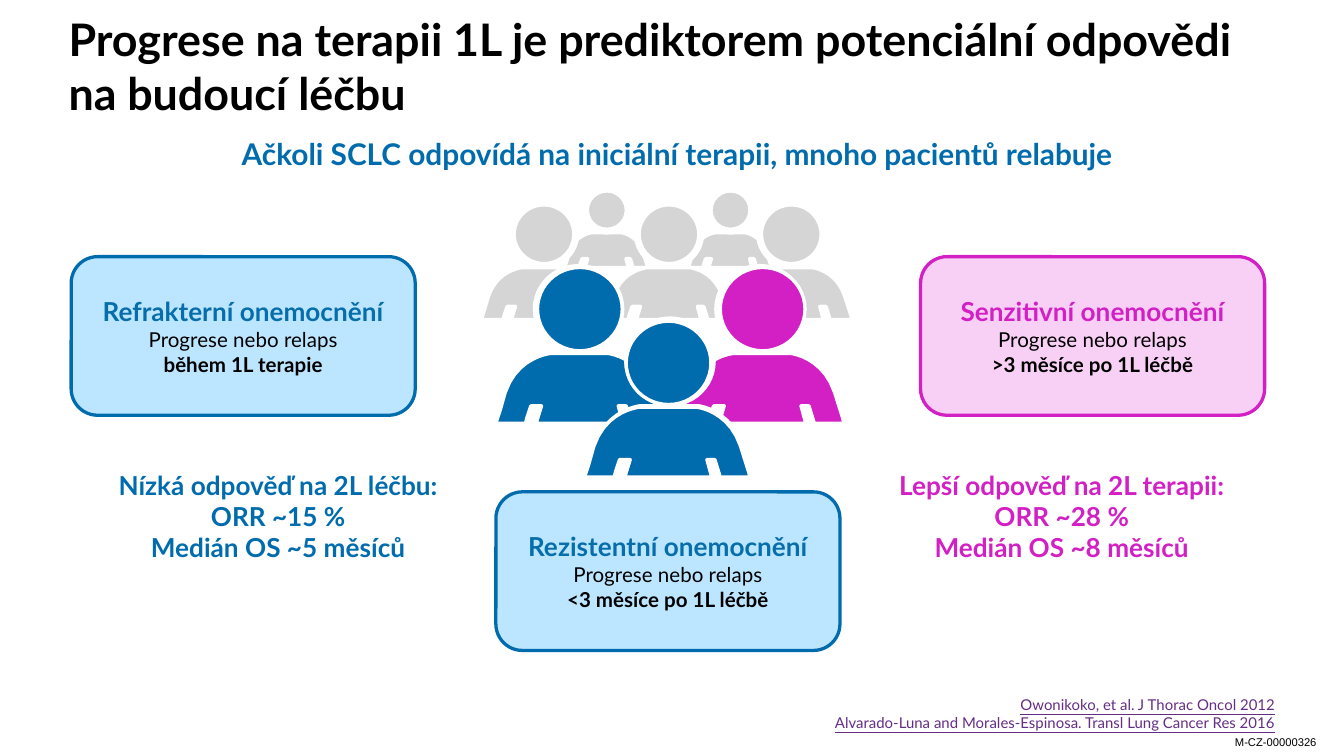
import dataclasses

import pptx
import pptx.dml.color
import pptx.enum.shapes
import pptx.enum.text
import pptx.util

RGBColor = pptx.dml.color.RGBColor
Align = pptx.enum.text.PP_ALIGN
Anchor = pptx.enum.text.MSO_ANCHOR
Kind = pptx.enum.shapes.MSO_SHAPE

PX = 9144  # EMU in one px, 100 px to the inch
BLACK = RGBColor(0x00, 0x00, 0x00)
WHITE = RGBColor(0xFF, 0xFF, 0xFF)
GREY = RGBColor(0xD5, 0xD5, 0xD5)
BLUE = RGBColor(0x00, 0x6C, 0xAD)
STEEL = RGBColor(0x07, 0x6E, 0xAC)
PALE = RGBColor(0xBC, 0xE6, 0xFF)
PINK = RGBColor(0xD2, 0x20, 0xC5)
ROSE = RGBColor(0xF8, 0xD0, 0xF5)
PURPLE = RGBColor(0x64, 0x2D, 0x86)

BODY = 123  # width of the full-size body that the figure is drawn in


@dataclasses.dataclass(frozen=True)
class Person:
    left: int
    top: int
    width: int
    fill: RGBColor = GREY
    rim: float = 3.75
    edge: float = 2


@dataclasses.dataclass(frozen=True)
class Card:
    left: int
    top: int
    head: str
    when: str
    ink: RGBColor
    line: RGBColor
    fill: RGBColor


@dataclasses.dataclass(frozen=True)
class Result:
    left: int
    lines: tuple[str, ...]
    ink: RGBColor


CROWD = (
    Person(420, 173, 62),
    Person(512, 173, 62),
    Person(451, 199, 92),
    Person(542, 199, 92),
    Person(358, 199, 92),
    Person(503, 263, BODY),
    Person(368, 263, BODY),
    Person(369, 263, BODY, BLUE, 1.75, 1.75),
    Person(505, 263, BODY, PINK, 1.75, 1.75),
    Person(436, 302, BODY),
    Person(435, 303, BODY, BLUE, 1.75, 1.75),
)
CARDS = (
    Card(53, 191, "Refrakterní onemocnění", "během 1L terapie", STEEL, BLUE, PALE),
    Card(685, 191, "Senzitivní onemocnění", ">3 měsíce po 1L léčbě", PINK, PINK, ROSE),
    Card(369, 366, "Rezistentní onemocnění", "<3 měsíce po 1L léčbě", STEEL, BLUE, PALE),
)
RESULTS = (
    Result(56, ("Nízká odpověď na 2L léčbu:", "ORR ~15 %", "Medián OS ~5 měsíců"), BLUE),
    Result(639, ("Lepší odpověď na 2L terapii:", "ORR ~28 %", "Medián OS ~8 měsíců"), PINK),
)
SOURCES = (
    "Owonikoko, et al. J Thorac Oncol 2012",
    "Alvarado-Luna and Morales-Espinosa. Transl Lung Cancer Res 2016",
)


def place(*px: float) -> list[int]:
    return [round(n * PX) for n in px]


def write(frame, text: str, *, size: float, ink: RGBColor, bold: bool = False,
          align=Align.CENTER, font: str = "Lato", under: bool = False) -> None:
    """Add one line of text to a frame."""
    para = frame.paragraphs[0] if not frame.text else frame.add_paragraph()
    para.alignment = align
    para.space_before = pptx.util.Pt(0)
    run = para.add_run()
    run.text = text
    run.font.name = font
    run.font.size = pptx.util.Pt(size)
    run.font.bold = bold
    run.font.underline = under
    run.font.color.rgb = ink


def setup(frame, anchor, inset: bool = True, wrap: bool = True):
    frame.word_wrap = wrap
    frame.auto_size = pptx.enum.text.MSO_AUTO_SIZE.NONE
    frame.vertical_anchor = anchor
    side, end = place(10, 5) if inset else (0, 0)
    frame.margin_left = frame.margin_right = side
    frame.margin_top = frame.margin_bottom = end
    return frame


def paint(shape, fill: RGBColor, line: RGBColor | None = None, width: float = 0) -> None:
    shape.shadow.inherit = False
    shape.fill.solid()
    shape.fill.fore_color.rgb = fill
    if line is None:
        shape.line.fill.background()
    else:
        shape.line.color.rgb = line
        shape.line.width = pptx.util.Pt(width)


def curve(a, b, c, d, steps: int = 10) -> list[tuple[float, float]]:
    """Points on a cubic curve from a to d."""
    dots = []
    for i in range(steps + 1):
        t = i / steps
        u = 1 - t
        dots.append(tuple(u**3 * p + 3 * u * u * t * q + 3 * u * t * t * r + t**3 * s
                          for p, q, r, s in zip(a, b, c, d)))
    return dots


TORSO = [
    *curve((83, 0), (83, 0), (107, 2), (116, 29)),  # right shoulder
    (122, 48), (123, 52), (101, 52), (97, 39), (91, 39), (94, 50), (94, 52),
    (30, 52), (34, 39), (26, 39), (23, 48), (22, 52), (0, 52), (3, 43),
    *curve((7, 29), (16, 2), (41, 0), (41, 0)),  # left shoulder
]


def draw_person(shapes, who: Person) -> None:
    ratio = who.width / BODY
    dots = [place(who.left + x * ratio, who.top + y * ratio) for x, y in TORSO]
    pen = shapes.build_freeform(*dots[0], scale=1.0)
    pen.add_line_segments(dots[1:], close=True)
    paint(pen.convert_to_shape(), who.fill, WHITE, who.edge)
    area = place(who.left + 31 * ratio, who.top - 64 * ratio, 63 * ratio, 62 * ratio)
    paint(shapes.add_shape(Kind.OVAL, *area), who.fill, WHITE, who.rim)


def draw_card(shapes, card: Card) -> None:
    box = shapes.add_shape(Kind.ROUNDED_RECTANGLE, *place(card.left, card.top, 256, 118))
    paint(box, card.fill, card.line, 1.75)
    frame = setup(box.text_frame, Anchor.MIDDLE)
    write(frame, card.head, size=14, ink=card.ink, bold=True)
    write(frame, "Progrese nebo relaps", size=11, ink=BLACK)
    write(frame, card.when, size=11, ink=BLACK, bold=True)


def draw_result(shapes, item: Result) -> None:
    box = shapes.add_textbox(*place(item.left, 344, 302, 81))
    frame = setup(box.text_frame, Anchor.TOP)
    for line in item.lines:
        write(frame, line, size=14, ink=item.ink, bold=True)


def main() -> None:
    deck = pptx.Presentation()
    deck.slide_width, deck.slide_height = place(1000, 562.5)
    slide = deck.slides.add_slide(deck.slide_layouts[5])
    shapes = slide.shapes

    # Title and subtitle
    title = shapes.title
    title.left, title.top, title.width, title.height = place(51, 21, 898, 68)
    write(setup(title.text_frame, Anchor.BOTTOM, inset=False),
          "Progrese na terapii 1L je prediktorem potenciální odpovědi na budoucí léčbu",
          size=24, ink=BLACK, bold=True, align=Align.LEFT)
    band = shapes.add_shape(Kind.ROUNDED_RECTANGLE, *place(54, 91, 900, 47))
    paint(band, WHITE)
    write(setup(band.text_frame, Anchor.MIDDLE),
          "Ačkoli SCLC odpovídá na iniciální terapii, mnoho pacientů relabuje",
          size=16, ink=BLUE, bold=True)

    # Patients, back row first
    for who in CROWD:
        draw_person(shapes, who)

    # Disease types and their outcomes
    for card in CARDS:
        draw_card(shapes, card)
    for item in RESULTS:
        draw_result(shapes, item)

    # Sources and document code
    notes = shapes.add_textbox(*place(401, 520, 548, 24))
    frame = setup(notes.text_frame, Anchor.BOTTOM, inset=False)
    for text in SOURCES:
        write(frame, text, size=8, ink=PURPLE, align=Align.RIGHT, under=True)
    code = shapes.add_textbox(*place(909, 542, 82, 20))
    write(setup(code.text_frame, Anchor.TOP, wrap=False), "M-CZ-00000326",
          size=6, ink=BLACK, align=Align.LEFT, font="Arial")

    deck.save("out.pptx")


if __name__ == "__main__":
    main()
